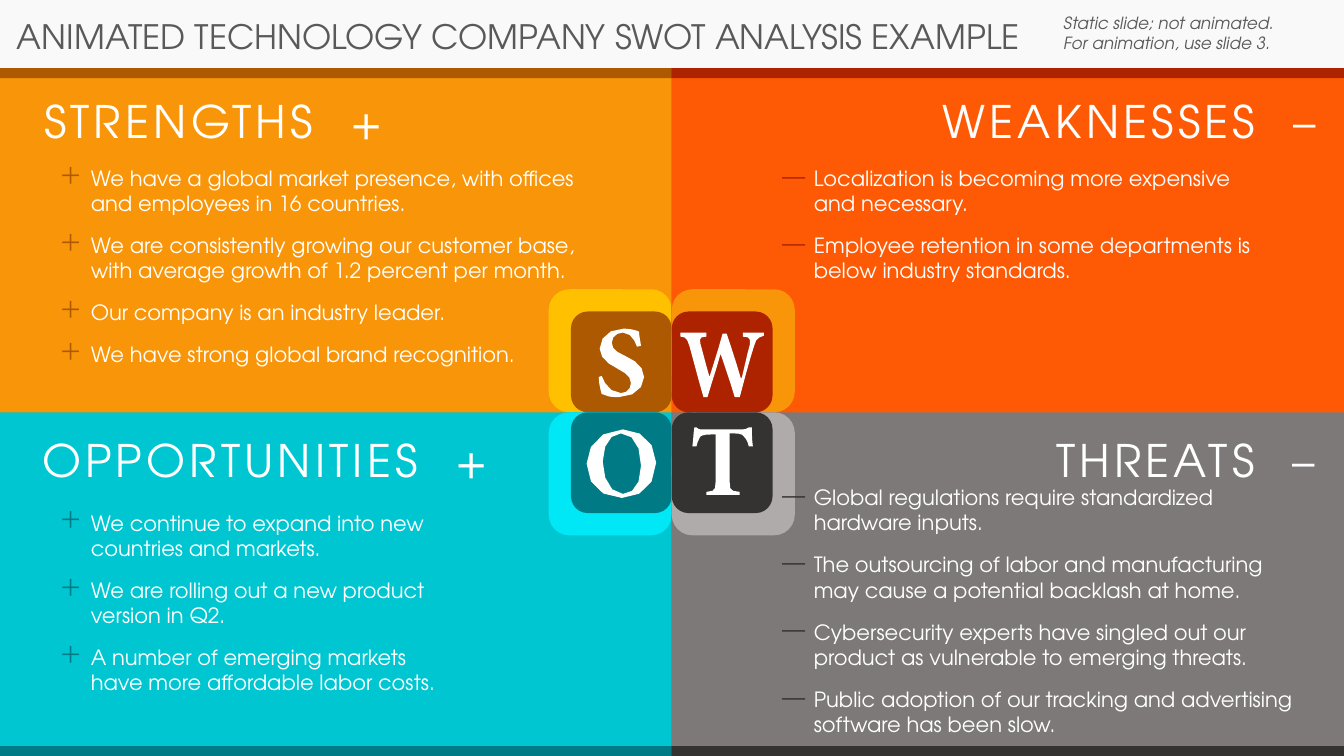
"""Build a four-quadrant SWOT analysis slide for a technology company."""
from lxml import etree
from pptx import Presentation
from pptx import util as u
from pptx.dml.color import RGBColor
from pptx.enum import shapes, text
from pptx.oxml.ns import qn

FONT, WHITE, GREY = "TeX Gyre Adventor", "FFFFFF", "595959"
MIDDLE_X, MIDDLE_Y, TOP, BOTTOM = 16.93, 10.39, 1.72, 19.05
PANEL_WIDTH, BAND, OUTER_TILE, INNER_TILE = 16.95, 0.25, 3.1, 2.54
CURVE_STEPS = 3


def paint(fill, color):
    fill.solid()
    fill.fore_color.rgb = RGBColor.from_string(color)


def write(frame, paragraph, words, size, color, italic=False):
    settings = {"word_wrap": True, "vertical_anchor": text.MSO_ANCHOR.TOP,
                "auto_size": text.MSO_AUTO_SIZE.SHAPE_TO_FIT_TEXT}
    for name, value in settings.items():
        setattr(frame, name, value)
    run = paragraph.add_run()
    run.text = words
    font_format = {"name": FONT, "size": u.Pt(size), "bold": False, "italic": italic}
    for name, value in font_format.items():
        setattr(run.font, name, value)
    paint(run.font.fill, color)
    return run


# Letter outlines in hundredths of an inch: a pair is a line, six numbers are a Bézier curve.
letter_s = [[
    (632, 344), (630, 338, 626, 330, 618, 330), (612, 330, 607, 334, 607, 340),
    (607, 346, 611, 349, 620, 353), (631, 358, 639, 364, 639, 374),
    (639, 385, 629, 394, 614, 394), (610, 394, 606, 394, 603, 393),
    (600, 392, 598, 391, 597, 391), (596, 388, 594, 380, 594, 374), (597, 373),
    (599, 379, 605, 390, 616, 390), (622, 390, 626, 386, 626, 380),
    (626, 374, 621, 370, 613, 366), (603, 361, 595, 355, 595, 346),
    (595, 335, 604, 326, 619, 326), (626, 326, 632, 328, 634, 329),
    (634, 332, 635, 337, 636, 343)]]
letter_w = [[
    (758, 333), (752, 335, 750, 336, 748, 344), (746, 350, 741, 367, 734, 394), (729, 394),
    (725, 380, 720, 366, 715, 351), (711, 366, 706, 380, 702, 394), (698, 394),
    (693, 377, 689, 361, 684, 343), (682, 336, 680, 334, 675, 334), (675, 330), (701, 330),
    (701, 334), (694, 334, 694, 336, 695, 341), (698, 352, 701, 364, 704, 374),
    (708, 361, 713, 346, 717, 331), (721, 331), (726, 346, 731, 361, 735, 375), (736, 375),
    (739, 363, 742, 348, 744, 342), (745, 336, 744, 334, 737, 334), (737, 330), (758, 330)]]
letter_o = [
    [(651, 459), (651, 481, 636, 494, 617, 494), (596, 494, 582, 480, 582, 460),
     (582, 443, 595, 426, 618, 426), (636, 426, 651, 439, 651, 459)],
    [(598, 458), (598, 475, 606, 490, 618, 490), (628, 490, 636, 481, 636, 462),
     (636, 442, 628, 430, 616, 430), (606, 430, 598, 441, 598, 458)]]
letter_t = [[
    (743, 443), (742, 438, 740, 435, 738, 433), (737, 431, 734, 430, 728, 430), (724, 430),
    (724, 478), (724, 487, 725, 487, 734, 488), (734, 491), (701, 491), (701, 488),
    (709, 487, 710, 487, 710, 478), (710, 431), (707, 431), (698, 431, 697, 432, 695, 433),
    (694, 435, 692, 438, 691, 443), (687, 443), (688, 436, 688, 429, 689, 424), (691, 424),
    (693, 426, 694, 426, 697, 426), (737, 426), (740, 426, 741, 425, 743, 424), (746, 424),
    (746, 428, 746, 437, 747, 443)]]

quadrants = [
    {"name": "STRENGTHS", "row": 0, "column": 0, "letter": letter_s,
     "panel": "F99509", "tile": "FFC000", "dark": "AD5902",
     "heading": (0.86, 2.24, 11.61, 1.63), "list": (1.24, 4.04, 14.22, 5.38),
     "points": ["We have a global market presence, with offices and employees in 16 countries.",
                "We are consistently growing our customer base, "
                "with average growth of 1.2 percent per month.",
                "Our company is an industry leader.",
                "We have strong global brand recognition."]},
    {"name": "WEAKNESSES", "row": 0, "column": 1, "letter": letter_w,
     "panel": "FE5A05", "tile": "F99509", "dark": "AD2300",
     "heading": (23.37, 2.24, 10.03, 1.63), "list": (19.46, 4.04, 12.32, 3.25),
     "points": ["Localization is becoming more expensive and necessary.",
                "Employee retention in some departments is below industry standards."]},
    {"name": "OPPORTUNITIES", "row": 1, "column": 0, "letter": letter_o,
     "panel": "00C6D1", "tile": "00E8F6", "dark": "007A84",
     "heading": (0.81, 10.77, 13.46, 1.63), "list": (1.24, 12.73, 10.62, 4.95),
     "points": ["We continue to expand into new countries and markets.",
                "We are rolling out a new product version in Q2.",
                "A number of emerging markets have more affordable labor costs."]},
    {"name": "THREATS", "row": 1, "column": 1, "letter": letter_t,
     "panel": "7E7979", "tile": "AFABAB", "dark": "353232",
     "heading": (24.49, 10.77, 8.89, 1.63), "list": (19.46, 12.09, 13.59, 6.68),
     "points": ["Global regulations require standardized hardware inputs.",
                "The outsourcing of labor and manufacturing may cause a potential backlash at home.",
                "Cybersecurity experts have singled out our product as vulnerable to emerging threats.",
                "Public adoption of our tracking and advertising software has been slow."]},
]

presentation = Presentation()
presentation.slide_width, presentation.slide_height = u.Cm(33.87), u.Cm(BOTTOM)
slide = presentation.slides.add_slide(presentation.slide_layouts[5])
paint(slide.background.fill, "F9F9F9")

title = slide.shapes.title
title_place = {"left": 0.17, "top": 0.27, "width": 32.11, "height": 1.27}
for name, value in title_place.items():
    setattr(title, name, u.Cm(value))
title_paragraph = title.text_frame.paragraphs[0]
title_paragraph.alignment = text.PP_ALIGN.LEFT
write(title.text_frame, title_paragraph,
      "ANIMATED TECHNOLOGY COMPANY SWOT ANALYSIS EXAMPLE", 24, GREY)

note = slide.shapes.add_textbox(*map(u.Cm, (26.55, 0.2, 6.32, 1.27))).text_frame
write(note, note.paragraphs[0],
      "Static slide; not animated. For animation, use slide 3.", 12, GREY, italic=True)

for quadrant in quadrants:
    row, column = quadrant["row"], quadrant["column"]
    left = column * (MIDDLE_X - 0.01)
    panel_top, panel_height = [(TOP, 9.53), (MIDDLE_Y, BOTTOM - MIDDLE_Y)][row]
    band_top = [TOP, BOTTOM - BAND][row]
    blocks = [
        (shapes.MSO_SHAPE.RECTANGLE, left, panel_top, PANEL_WIDTH, panel_height, quadrant["panel"]),
        (shapes.MSO_SHAPE.RECTANGLE, left, band_top, PANEL_WIDTH, BAND, quadrant["dark"])]
    for size, color in ((OUTER_TILE, quadrant["tile"]), (INNER_TILE, quadrant["dark"])):
        blocks.append((shapes.MSO_SHAPE.ROUNDED_RECTANGLE, MIDDLE_X - size * (1 - column),
                       MIDDLE_Y - size * (1 - row), size, size, color))
    for kind, *place, color in blocks:
        paint(slide.shapes.add_shape(kind, *map(u.Cm, place)).fill, color)

    contours = []
    for start, *segments in quadrant["letter"]:
        outline = [start]
        for segment in segments:
            if len(segment) == 2:
                outline.append(segment)
                continue
            corners = [outline[-1], segment[:2], segment[2:4], segment[4:]]
            for step in range(1, CURVE_STEPS + 1):
                t = step / CURVE_STEPS
                weights = ((1 - t) ** 3, 3 * t * (1 - t) ** 2, 3 * t * t * (1 - t), t ** 3)
                outline.append(tuple(sum(weight * corner[axis] for weight, corner
                                         in zip(weights, corners)) for axis in (0, 1)))
        contours.append([tuple(u.Cm(value * 2.54 / 100) for value in point) for point in outline])
    builder = slide.shapes.build_freeform(*contours[0][0])
    for index, contour in enumerate(contours):
        if index:
            builder.move_to(*contour[0])
        builder.add_line_segments(contour[1:])
    paint(builder.convert_to_shape().fill, WHITE)

    heading = slide.shapes.add_textbox(*map(u.Cm, quadrant["heading"])).text_frame
    paragraph = heading.paragraphs[0]
    paragraph.alignment = [text.PP_ALIGN.LEFT, text.PP_ALIGN.RIGHT][column]
    for words, spacing in ((quadrant["name"], 300), (" ", 1490), ("+–"[column], 300)):
        run = write(heading, paragraph, words, 32, WHITE)
        run.font._element.set("spc", str(spacing))

    frame = slide.shapes.add_textbox(*map(u.Cm, quadrant["list"])).text_frame
    for index, point in enumerate(quadrant["points"]):
        paragraph = frame.add_paragraph() if index else frame.paragraphs[0]
        paragraph.space_after = u.Pt(12)
        write(frame, paragraph, point, 15, WHITE)
        properties = paragraph._p.get_or_add_pPr()
        properties.set("marL", str(u.Cm(0.8)))
        properties.set("indent", str(-u.Cm(0.8)))
        bullet_color = etree.SubElement(properties, qn("a:buClr"))
        etree.SubElement(bullet_color, qn("a:srgbClr"), val=quadrant["dark"])
        etree.SubElement(properties, qn("a:buSzPct"), val="110000")
        etree.SubElement(properties, qn("a:buFont"), typeface=FONT)
        etree.SubElement(properties, qn("a:buChar"), char="＋—"[column])

for shape in slide.shapes:
    shape.line.fill.background()
    if shape.shape_type != shapes.MSO_SHAPE_TYPE.PLACEHOLDER:
        shape.shadow.inherit = False

presentation.save("out.pptx")
